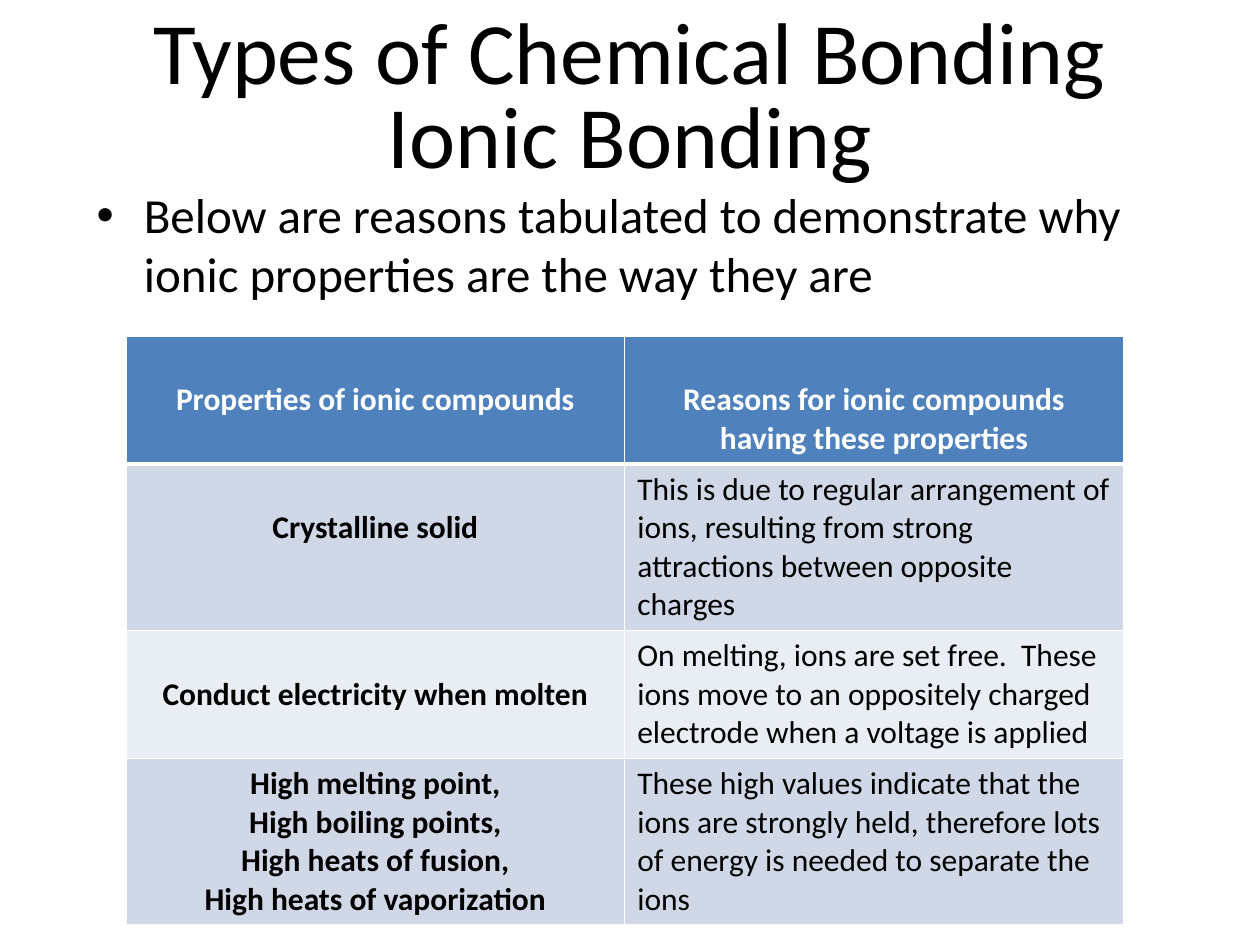
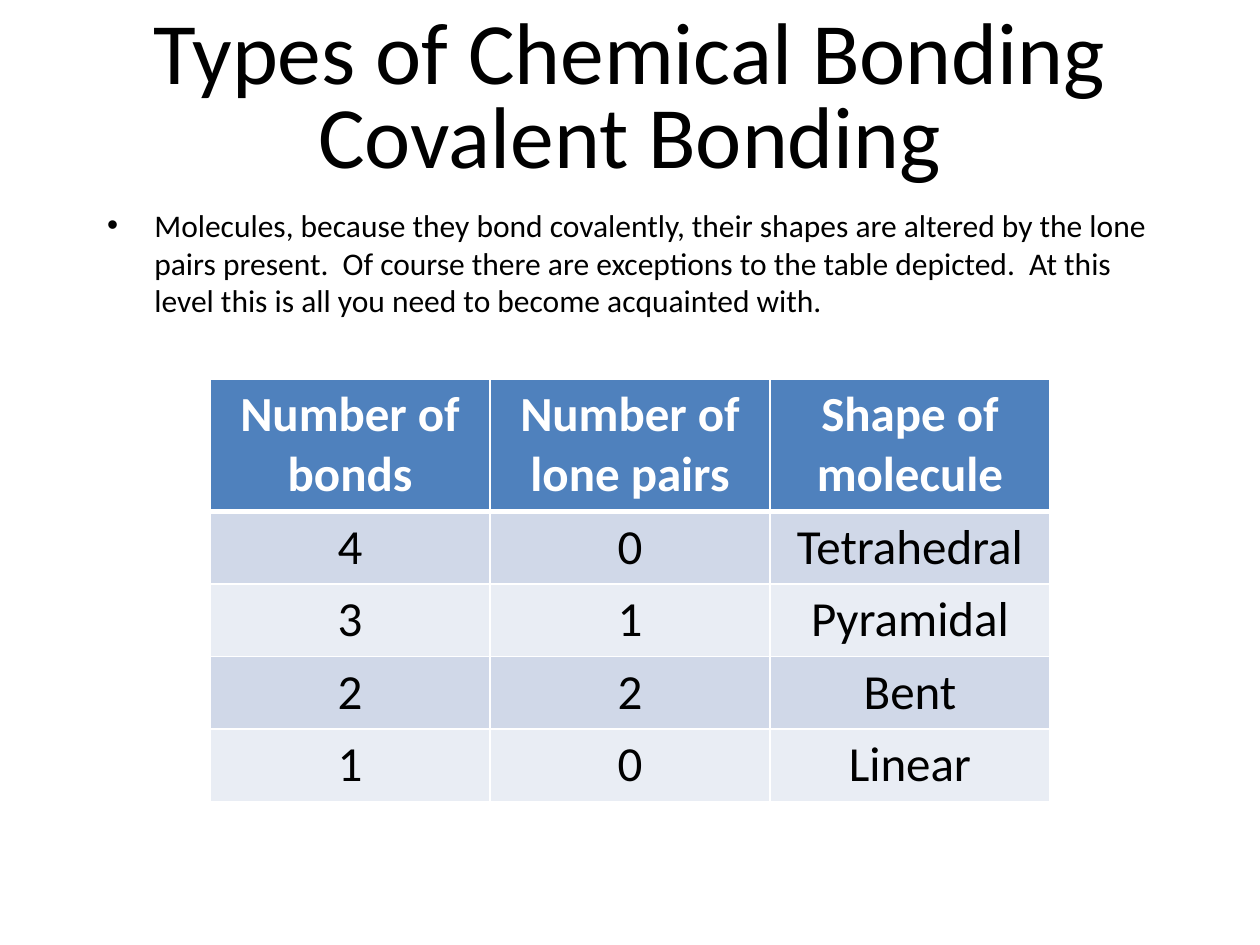
from lxml.etree import SubElement
from pptx import Presentation
from pptx.dml.color import RGBColor
from pptx.enum.text import MSO_ANCHOR, MSO_AUTO_SIZE, PP_ALIGN
from pptx.oxml.ns import qn
from pptx.util import Pt

BLACK = RGBColor(0x00, 0x00, 0x00)
WHITE = RGBColor(0xFF, 0xFF, 0xFF)
HEADER = RGBColor(0x4F, 0x81, 0xBD)
BANDS = (RGBColor(0xD0, 0xD8, 0xE8), RGBColor(0xE9, 0xED, 0xF4))
FONT = "Calibri"
LINE_DROP = 25.6

IONIC_ROWS = [
    ("Properties of ionic compounds",
     "Reasons for ionic compounds having these properties"),
    ("Crystalline solid",
     "This is due to regular arrangement of ions, resulting from strong "
     "attractions between opposite charges"),
    ("Conduct electricity when molten",
     "On melting, ions are set free.  These ions move to an oppositely "
     "charged electrode when a voltage is applied"),
    ("High melting point,\nHigh boiling points,\nHigh heats of fusion,\n"
     "High heats of vaporization",
     "These high values indicate that the ions are strongly held, therefore "
     "lots of energy is needed to separate the ions"),
]
COVALENT_ROWS = [
    ("Number of bonds", "Number of lone pairs", "Shape of molecule"),
    ("4", "0", "Tetrahedral"),
    ("3", "1", "Pyramidal"),
    ("2", "2", "Bent"),
    ("1", "0", "Linear"),
]


def write(tf, text, size, color=BLACK, bold=False, align=None, spacing=None):
    """Write each line of text as a formatted paragraph."""
    for i, line in enumerate(text.split("\n")):
        p = tf.add_paragraph() if i else tf.paragraphs[0]
        p.alignment = align
        p.line_spacing = spacing
        r = p.add_run()
        r.text = line
        r.font.name = FONT
        r.font.size = Pt(size)
        r.font.bold = bold
        r.font.color.rgb = color


def place(sp, left, top, width, height):
    """Move a placeholder and return its text frame."""
    sp.left, sp.top, sp.width, sp.height = map(Pt, (left, top, width, height))
    sp.text_frame.auto_size = MSO_AUTO_SIZE.NONE
    return sp.text_frame


def add_slide(prs, topic, body, body_box, body_size):
    """Add a slide with the shared title and one bullet."""
    s = prs.slides.add_slide(prs.slide_layouts[1])
    tf = place(s.shapes.title, 54, 0, 612, 116)
    tf.vertical_anchor = MSO_ANCHOR.MIDDLE
    write(tf, f"Types of Chemical Bonding\n{topic}", 50,
          align=PP_ALIGN.CENTER, spacing=0.8)
    write(place(s.placeholders[1], *body_box), body, body_size)
    return s


def set_borders(cell, is_header):
    """Draw white cell borders, thicker below the header."""
    tcPr = cell._tc.get_or_add_tcPr()
    for i, side in enumerate(("lnL", "lnR", "lnT", "lnB")):
        width = Pt(3 if is_header and side == "lnB" else 1)
        ln = tcPr.makeelement(qn(f"a:{side}"), {"w": str(width)})
        fill = SubElement(ln, qn("a:solidFill"))
        SubElement(fill, qn("a:srgbClr"), val=str(WHITE))
        tcPr.insert(i, ln)


def add_table(s, rows, left, top, width, heights, size, reasons=False):
    """Add a banded table; a reasons column is left-aligned."""
    cols = len(rows[0])
    table = s.shapes.add_table(len(rows), cols, Pt(left), Pt(top),
                               Pt(width), Pt(sum(heights))).table
    for i, (row, height) in enumerate(zip(rows, heights)):
        table.rows[i].height = Pt(height)
        is_header = i == 0
        for j, text in enumerate(row):
            cell = table.cell(i, j)
            is_reason = reasons and j == 1 and not is_header
            cell.fill.solid()
            cell.fill.fore_color.rgb = HEADER if is_header else BANDS[(i - 1) % 2]
            set_borders(cell, is_header)
            if reasons and not is_reason and "\n" not in text:
                cell.margin_top = Pt(LINE_DROP)
            write(cell.text_frame, text, size,
                  color=WHITE if is_header else BLACK,
                  bold=is_header or (reasons and j == 0),
                  align=PP_ALIGN.LEFT if is_reason else PP_ALIGN.CENTER)


def main():
    """Build both slides and save them."""
    prs = Presentation()
    prs.slide_width, prs.slide_height = Pt(720), Pt(540)

    s = add_slide(prs, "Ionic Bonding",
                  "Below are reasons tabulated to demonstrate why ionic "
                  "properties are the way they are",
                  (48, 102, 624, 438), 28)
    add_table(s, IONIC_ROWS, 72, 192, 570, (73, 95, 73, 95), 18, reasons=True)

    s = add_slide(prs, "Covalent Bonding",
                  "Molecules, because they bond covalently, their shapes are "
                  "altered by the lone pairs present.  Of course there are "
                  "exceptions to the table depicted.  At this level this is "
                  "all you need to become acquainted with.",
                  (54, 114, 624, 426), 18)
    add_table(s, COVALENT_ROWS, 120, 216.5, 480, (75.5,) + (41.4,) * 4, 28)

    prs.save("out.pptx")


if __name__ == "__main__":
    main()
